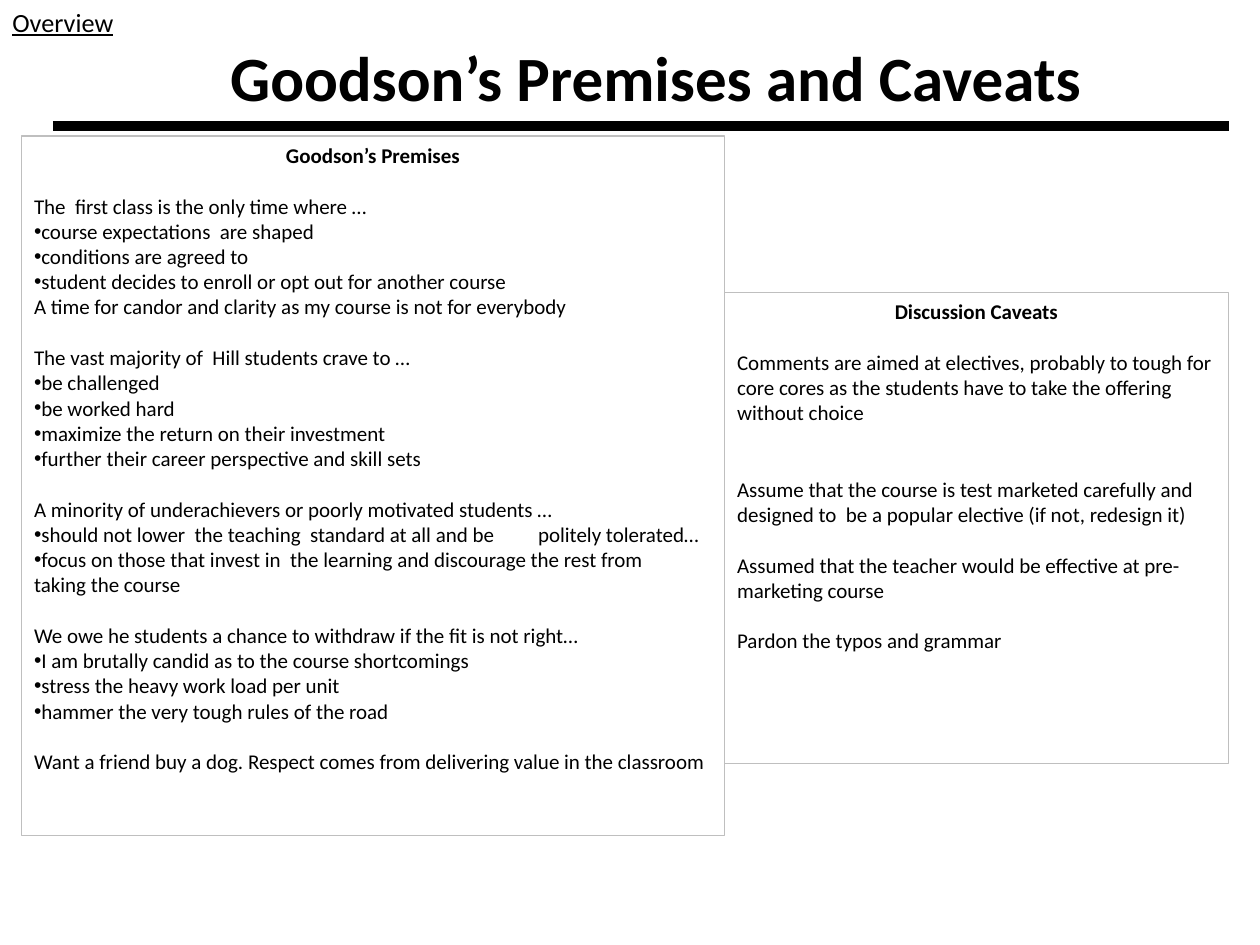
from dataclasses import dataclass

from lxml.etree import SubElement
from pptx import Presentation
from pptx.dml.color import RGBColor
from pptx.enum.text import MSO_ANCHOR, MSO_AUTO_SIZE, PP_ALIGN
from pptx.oxml.ns import qn
from pptx.util import Inches, Pt

BLACK = RGBColor(0x00, 0x00, 0x00)
BORDER_GRAY = RGBColor(0xBF, 0xBF, 0xBF)
FONT = "Calibri"
LINE_HEIGHT = 14.6


@dataclass
class Section:
    lead: str
    points: tuple = ()
    closing: str = ""
    gap_lines: int = 1


PREMISES = [
    Section(
        "The  first class is the only time where …",
        (
            "course expectations  are shaped",
            "conditions are agreed to",
            "student decides to enroll or opt out for another course",
        ),
        "A time for candor and clarity as my course is not for everybody",
    ),
    Section(
        "The vast majority of  Hill students crave to …",
        (
            "be challenged",
            "be worked hard",
            "maximize the return on their investment",
            "further their career perspective and skill sets",
        ),
    ),
    Section(
        "A minority of underachievers or poorly motivated students …",
        (
            "should not lower  the teaching  standard at all and be \tpolitely tolerated…",
            "focus on those that invest in  the learning and discourage the rest from \ttaking the course",
        ),
    ),
    Section(
        "We owe he students a chance to withdraw if the fit is not right…",
        (
            "I am brutally candid as to the course shortcomings",
            "stress the heavy work load per unit",
            "hammer the very tough rules of the road",
        ),
    ),
    Section("Want a friend buy a dog. Respect comes from delivering value in the classroom"),
]

CAVEATS = [
    Section(
        "Comments are aimed at electives, probably to tough for core cores "
        "as the students have to take the offering without choice"
    ),
    Section(
        "Assume that the course is test marketed carefully and designed to  "
        "be a popular elective (if not, redesign it)",
        gap_lines=2,
    ),
    Section("Assumed that the teacher would be effective at pre- marketing course"),
    Section("Pardon the typos and grammar"),
]


def place(shape, box):
    shape.left, shape.top, shape.width, shape.height = map(Inches, box)


def prepare_frame(shape, anchor):
    frame = shape.text_frame
    frame.word_wrap = True
    frame.auto_size = MSO_AUTO_SIZE.NONE
    frame.vertical_anchor = anchor
    return frame


def format_font(paragraph, size, bold=False, underline=False):
    for run in paragraph.runs:
        font = run.font
        font.name, font.size = FONT, Pt(size)
        font.bold, font.underline = bold, underline
        font.color.rgb = BLACK


def set_bullet(paragraph, bulleted):
    properties = paragraph._p.get_or_add_pPr()
    properties.set("marL", "0")
    properties.set("indent", "0")
    if bulleted:
        SubElement(properties, qn("a:buFont"), typeface="Arial")
        SubElement(properties, qn("a:buChar"), char="•")
    else:
        SubElement(properties, qn("a:buNone"))


def add_header(slide, title_box, rule_box, label_box):
    title = slide.shapes.title
    place(title, title_box)
    heading = prepare_frame(title, MSO_ANCHOR.MIDDLE).paragraphs[0]
    heading.text = "Goodson’s Premises and Caveats"
    heading.alignment = PP_ALIGN.CENTER
    format_font(heading, 36, bold=True)

    left, top, width, height = map(Inches, rule_box)
    rule = slide.shapes.add_connector(1, left, top, left + width, top + height)
    rule.line.color.rgb = BLACK
    rule.line.width = Pt(6)
    SubElement(rule._element.spPr, qn("a:effectLst"))

    label = slide.shapes.add_textbox(*map(Inches, label_box))
    overview = prepare_frame(label, MSO_ANCHOR.TOP).paragraphs[0]
    overview.text = "Overview"
    format_font(overview, 15, underline=True)


def add_panel(panel, box, heading, sections):
    place(panel, box)
    panel.line.color.rgb = BORDER_GRAY
    panel.line.width = Pt(0.75)
    frame = prepare_frame(panel, MSO_ANCHOR.TOP)

    def write(paragraph, text, gap_lines=0, bulleted=False, is_heading=False):
        paragraph.text = text
        paragraph.alignment = PP_ALIGN.CENTER if is_heading else PP_ALIGN.LEFT
        paragraph.space_before = Pt(gap_lines * LINE_HEIGHT)
        set_bullet(paragraph, bulleted)
        format_font(paragraph, 12, bold=is_heading)

    write(frame.paragraphs[0], heading, is_heading=True)
    for section in sections:
        write(frame.add_paragraph(), section.lead, section.gap_lines)
        for point in section.points:
            write(frame.add_paragraph(), point, bulleted=True)
        if section.closing:
            write(frame.add_paragraph(), section.closing)


def main():
    deck = Presentation()
    deck.slide_width, deck.slide_height = Inches(10), Inches(7.5)
    slide = deck.slides.add_slide(deck.slide_layouts[3])
    for placeholder in list(slide.placeholders):
        if placeholder.placeholder_format.idx > 2:
            placeholder._element.getparent().remove(placeholder._element)

    add_header(slide, (-0.67, 0.25, 11.75, 0.71), (0.42, 1, 9.33, 0), (0, 0, 2.21, 0.35))
    add_panel(slide.placeholders[1], (0.17, 1.08, 5.58, 5.55), "Goodson’s Premises", PREMISES)
    add_panel(slide.placeholders[2], (5.75, 2.32, 4, 3.74), "Discussion Caveats", CAVEATS)
    deck.save("out.pptx")


if __name__ == "__main__":
    main()
